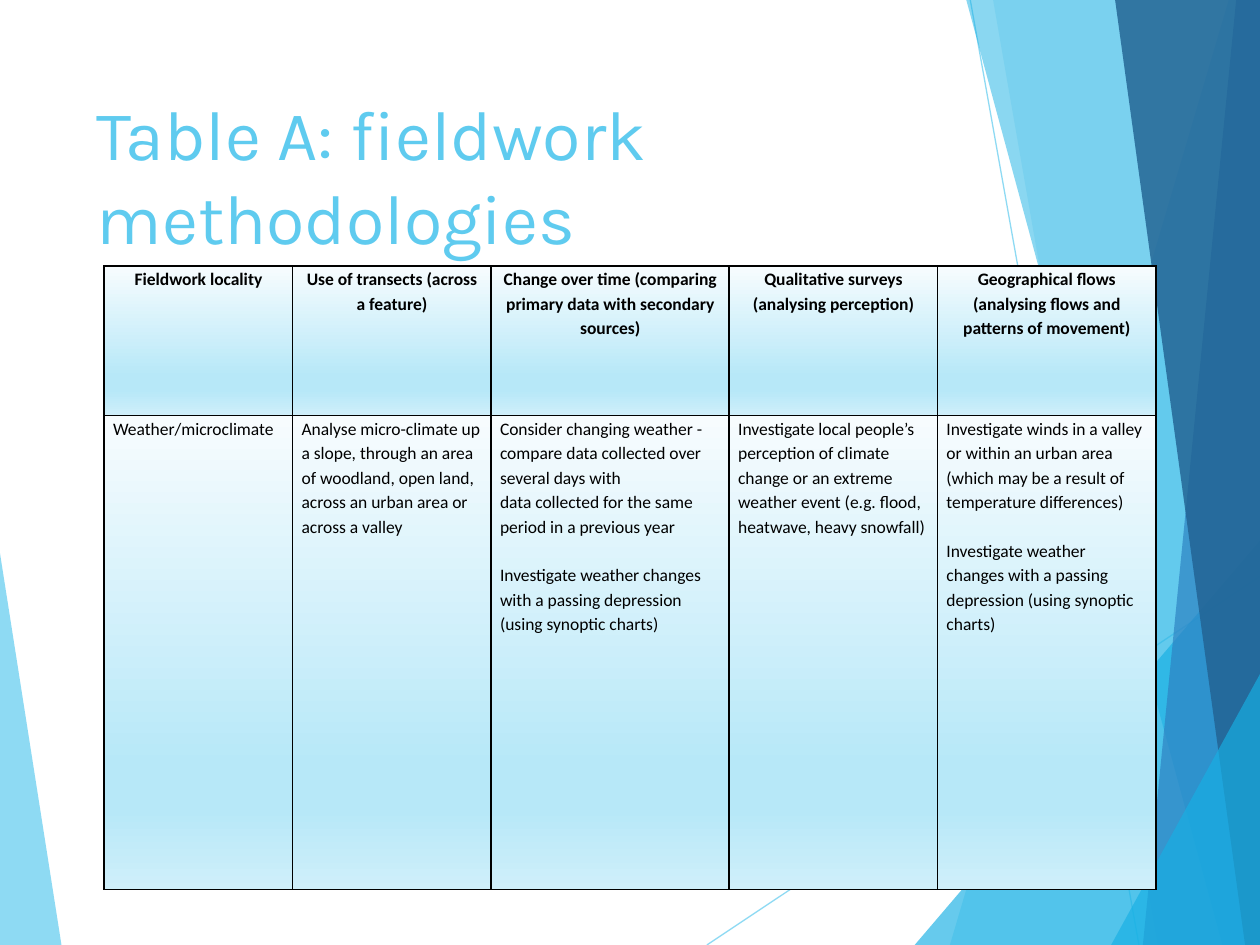
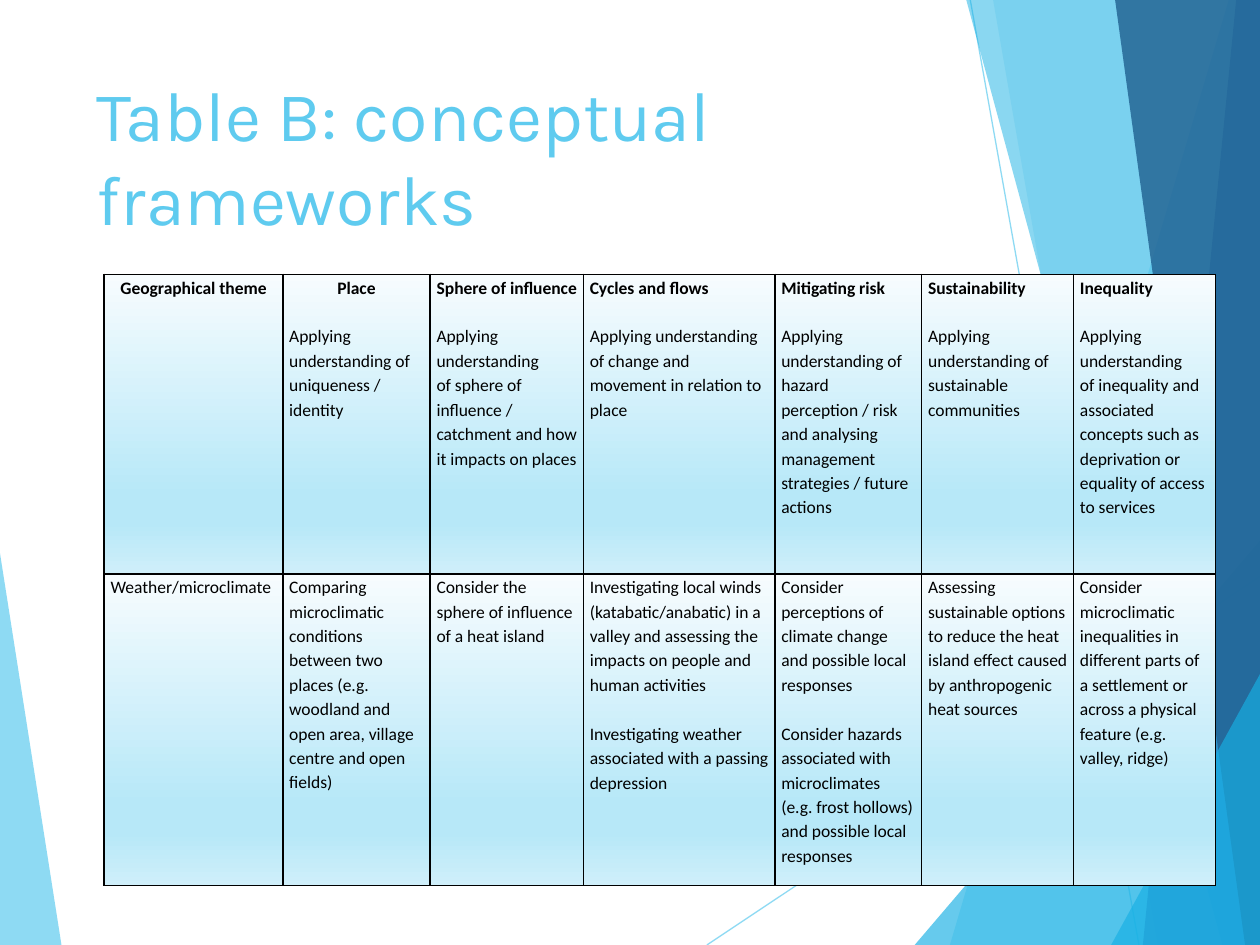
from dataclasses import dataclass

from lxml import etree
from pptx import Presentation
from pptx.dml.color import RGBColor
from pptx.enum.text import MSO_ANCHOR, MSO_AUTO_SIZE, PP_ALIGN
from pptx.oxml.ns import qn
from pptx.util import Cm, Pt

LEFT, CENTER = PP_ALIGN.LEFT, PP_ALIGN.CENTER
TOP = MSO_ANCHOR.TOP
NO_AUTOFIT = MSO_AUTO_SIZE.NONE

WIDTH, HEIGHT = 25.4, 19.05
TITLE_ONLY = 5
TITLE_FONT, TABLE_FONT = "Karla", "Calibri"
SKY, CYAN, BLUE, NAVY, BLACK = "5FCBEF", "17B0E4", "2E83C3", "226292", "000000"
CELL_GRADIENT = [(0, "F7FCFE"), (74, "B7E8F8"), (83, "B7E8F8"), (100, "CFEFFA")]
TABLE_LEFT = 2.1
LINE_PITCH = Pt(14)


@dataclass
class Facet:
    """A translucent polygon of the background; points in cm."""
    points: list[tuple[float, float]]
    color: str
    opacity: int


@dataclass
class Ray:
    """A thin translucent line of the background; ends in cm."""
    start: tuple[float, float]
    end: tuple[float, float]


@dataclass
class TableSlide:
    """Lengths in cm. In cells, a newline starts a paragraph, an empty line a gap."""
    title: str
    title_top: float
    table_top: float
    column_widths: list[float]
    row_heights: list[float]
    side_margin: float
    centered_headings: int
    rows: list[list[str]]


def right_band(top_x: float, bottom_x: float, color: str, opacity: int) -> Facet:
    """Full-height band from a slanted left side to the right slide edge."""
    points = [(top_x, 0), (bottom_x, HEIGHT), (WIDTH, HEIGHT), (WIDTH, 0)]
    return Facet(points, color, opacity)


def right_corner(bottom_x: float, right_y: float, color: str, opacity: int) -> Facet:
    """Triangle in the lower right corner."""
    return Facet([(bottom_x, HEIGHT), (WIDTH, right_y), (WIDTH, HEIGHT)], color, opacity)


BACKGROUND = [
    Facet([(0, 11.15), (1.24, HEIGHT), (0, HEIGHT)], SKY, 70),
    Ray((14.25, HEIGHT), (WIDTH, 11.62)),
    Ray((19.56, 0), (22.96, HEIGHT)),
    right_band(24.77, 19.15, SKY, 36),
    right_band(20.02, 23.34, SKY, 20),
    right_corner(18.44, 10.9, CYAN, 66),
    right_band(19.48, 24.64, CYAN, 50),
    right_band(24.92, 23.04, BLUE, 70),
    right_band(22.48, 25.1, NAVY, 82),
    right_corner(22.4, 13.59, CYAN, 66),
]

TABLE_SLIDES = [
    TableSlide(
        title="Table A: fieldwork methodologies",
        title_top=1.7,
        table_top=5.36,
        column_widths=[3.8, 4, 4.8, 4.2, 4.4],
        row_heights=[3.02, 9.55],
        side_margin=0.18,
        centered_headings=5,
        rows=[
            [
                "Fieldwork locality",
                "Use of transects (across a feature)",
                "Change over time (comparing primary data with secondary sources)",
                "Qualitative surveys (analysing perception)",
                "Geographical flows (analysing flows and patterns of movement)",
            ],
            [
                "Weather/microclimate",
                "Analyse micro-climate up a slope, through an area of woodland, "
                "open land, across an urban area or across a valley",
                "Consider changing weather - compare data collected over several days with\n"
                "data collected for the same period in a previous year\n\n"
                "Investigate weather changes with a passing depression (using synoptic charts)",
                "Investigate local people’s perception of climate change or an extreme "
                "weather event (e.g. flood, heatwave, heavy snowfall)",
                "Investigate winds in a valley or within an urban area "
                "(which may be a result of temperature differences)\n\n"
                "Investigate weather changes with a passing depression (using synoptic charts)",
            ],
        ],
    ),
    TableSlide(
        title="Table B: conceptual frameworks",
        title_top=1.32,
        table_top=5.53,
        column_widths=[3.6, 2.97, 3.09, 3.86, 2.96, 3.06, 2.86],
        row_heights=[6.04, 6.28],
        side_margin=0.13,
        centered_headings=3,
        rows=[
            [
                "Geographical theme",
                "Place\n\nApplying understanding of uniqueness / identity",
                "Sphere of influence\n\nApplying understanding\nof sphere of influence /\n"
                "catchment and how it impacts on places",
                "Cycles and flows\n\n"
                "Applying understanding of change and movement in relation to place",
                "Mitigating risk\n\n"
                "Applying understanding of hazard perception / risk and analysing\n"
                "management strategies / future actions",
                "Sustainability\n\nApplying understanding of sustainable\ncommunities",
                "Inequality\n\nApplying understanding\nof inequality and\n"
                "associated concepts such as deprivation or equality of access to services",
            ],
            [
                "Weather/microclimate",
                "Comparing microclimatic conditions between two places "
                "(e.g. woodland and open area, village centre and open fields)",
                "Consider the sphere of influence of a heat island",
                "Investigating local winds (katabatic/anabatic) in a valley and "
                "assessing the impacts on people and human activities\n\n"
                "Investigating weather associated with a passing depression",
                "Consider perceptions of climate change and possible local responses\n\n"
                "Consider hazards associated with microclimates (e.g. frost hollows) "
                "and possible local responses",
                "Assessing sustainable options to reduce the heat island effect "
                "caused by anthropogenic heat sources",
                "Consider microclimatic inequalities in different parts of a settlement "
                "or across a physical feature (e.g. valley, ridge)",
            ],
        ],
    ),
]


def rgb(color: str) -> RGBColor:
    return RGBColor.from_string(color)


def set_opacity(shape, percent: int) -> None:
    for color in shape._element.spPr.iter(qn("a:srgbClr")):
        etree.SubElement(color, qn("a:alpha"), val=str(percent * 1000))


def draw_facet(slide, facet: Facet) -> None:
    corners = [(Cm(x), Cm(y)) for x, y in facet.points]
    builder = slide.shapes.build_freeform(*corners[0])
    builder.add_line_segments(corners[1:], close=True)
    shape = builder.convert_to_shape()
    shape.shadow.inherit = False
    shape.fill.solid()
    shape.fill.fore_color.rgb = rgb(facet.color)
    shape.line.fill.background()
    set_opacity(shape, facet.opacity)


def draw_ray(slide, ray: Ray) -> None:
    ends = [Cm(value) for value in (*ray.start, *ray.end)]
    connector = slide.shapes.add_connector(1, *ends)
    connector.line.color.rgb = rgb(SKY)
    connector.line.width = Pt(0.75)
    set_opacity(connector, 70)
    etree.SubElement(connector._element.spPr, qn("a:effectLst"))


def draw_background(slide) -> None:
    for part in BACKGROUND:
        if isinstance(part, Ray):
            draw_ray(slide, part)
        else:
            draw_facet(slide, part)


def style_run(run, font_name: str, size: int, color: str, bold: bool = False) -> None:
    run.font.name = font_name
    run.font.size = Pt(size)
    run.font.color.rgb = rgb(color)
    run.font.bold = bold


def place_title(slide, text: str, top: float) -> None:
    title = slide.shapes.title
    title.left, title.top, title.width, title.height = Cm(1.7), Cm(top), Cm(17.63), Cm(3.66)
    frame = title.text_frame
    frame.text = text
    frame.word_wrap = True
    frame.auto_size = NO_AUTOFIT
    frame.vertical_anchor = TOP
    frame.paragraphs[0].alignment = LEFT
    style_run(frame.paragraphs[0].runs[0], TITLE_FONT, 40, SKY)


def add_solid_fill(parent, color: str) -> None:
    fill = etree.SubElement(parent, qn("a:solidFill"))
    etree.SubElement(fill, qn("a:srgbClr"), val=color)


def decorate_cell(cell) -> None:
    """Black borders and a vertical gradient."""
    properties = cell._tc.get_or_add_tcPr()
    for side in ("lnL", "lnR", "lnT", "lnB"):
        border = etree.SubElement(properties, qn(f"a:{side}"), w=str(Pt(1)))
        add_solid_fill(border, BLACK)
    gradient = etree.SubElement(properties, qn("a:gradFill"), rotWithShape="1")
    stops = etree.SubElement(gradient, qn("a:gsLst"))
    for position, color in CELL_GRADIENT:
        stop = etree.SubElement(stops, qn("a:gs"), pos=str(position * 1000))
        etree.SubElement(stop, qn("a:srgbClr"), val=color)
    etree.SubElement(gradient, qn("a:lin"), ang="5400000", scaled="0")


def write_cell(cell, text: str, is_heading: bool, is_centered: bool) -> None:
    """Write the paragraphs; the first one of a heading cell is bold."""
    frame = cell.text_frame
    for block_index, block in enumerate(text.split("\n\n")):
        for line_index, line in enumerate(block.split("\n")):
            is_first = block_index == line_index == 0
            para = frame.paragraphs[0] if is_first else frame.add_paragraph()
            para.text = line
            para.line_spacing = 1.15
            para.alignment = CENTER if is_first and is_centered else LEFT
            if block_index and not line_index:
                para.space_before = LINE_PITCH
            style_run(para.runs[0], TABLE_FONT, 10, BLACK, is_first and is_heading)


def draw_table(slide, content: TableSlide) -> None:
    widths, heights = content.column_widths, content.row_heights
    table = slide.shapes.add_table(
        len(heights), len(widths), Cm(TABLE_LEFT), Cm(content.table_top),
        Cm(sum(widths)), Cm(sum(heights))).table
    table.first_row = table.horz_banding = False
    for column, width in zip(table.columns, widths):
        column.width = Cm(width)
    for row_index, texts in enumerate(content.rows):
        table.rows[row_index].height = Cm(heights[row_index])
        is_heading = row_index == 0
        for column_index, text in enumerate(texts):
            cell = table.cell(row_index, column_index)
            cell.margin_left = cell.margin_right = Cm(content.side_margin)
            cell.margin_top = cell.margin_bottom = Cm(0)
            cell.vertical_anchor = TOP
            is_centered = is_heading and column_index < content.centered_headings
            write_cell(cell, text, is_heading, is_centered)
            decorate_cell(cell)


def main() -> None:
    deck = Presentation()
    deck.slide_width, deck.slide_height = Cm(WIDTH), Cm(HEIGHT)
    for content in TABLE_SLIDES:
        slide = deck.slides.add_slide(deck.slide_layouts[TITLE_ONLY])
        draw_background(slide)
        place_title(slide, content.title, content.title_top)
        draw_table(slide, content)
    deck.save("out.pptx")


if __name__ == "__main__":
    main()
